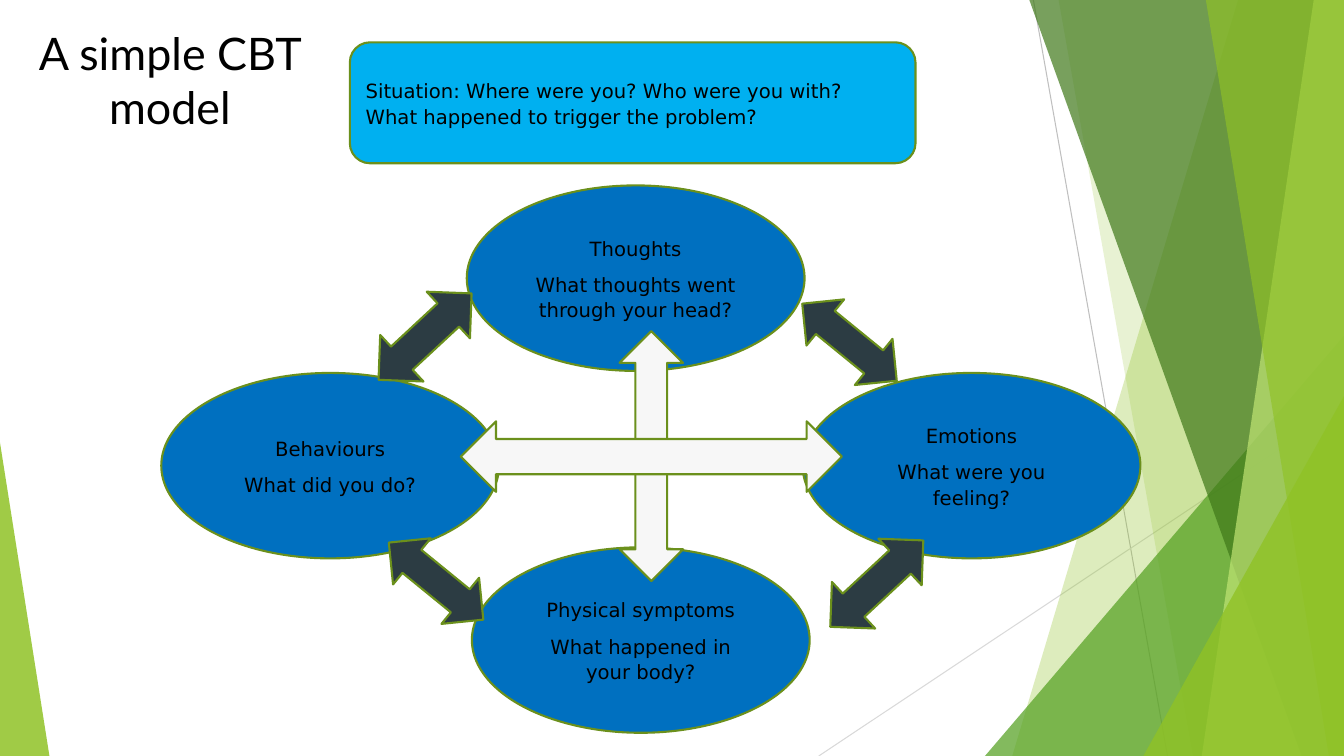
import pptx
import pptx.util
import pptx.dml.color
import pptx.enum.shapes
import pptx.enum.text
import pptx.oxml
import pptx.oxml.ns

RGBColor = pptx.dml.color.RGBColor
Shape = pptx.enum.shapes.MSO_SHAPE
Align = pptx.enum.text.PP_ALIGN
Anchor = pptx.enum.text.MSO_ANCHOR
qn = pptx.oxml.ns.qn

BLACK = RGBColor(0x00, 0x00, 0x00)
SKY = RGBColor(0x00, 0xB0, 0xF0)
BLUE = RGBColor(0x00, 0x70, 0xC0)
SLATE = RGBColor(0x2C, 0x3C, 0x43)
PALE = RGBColor(0xF7, 0xF7, 0xF7)
OLIVE = RGBColor(0x6B, 0x90, 0x1C)
LIME = RGBColor(0x90, 0xC2, 0x26)
LIGHT_LIME = RGBColor(0xC0, 0xE4, 0x74)
GREEN = RGBColor(0x54, 0xA0, 0x21)
FOREST = RGBColor(0x3F, 0x78, 0x19)
GRAY = RGBColor(0xBF, 0xBF, 0xBF)
LIGHT_GRAY = RGBColor(0xD9, 0xD9, 0xD9)


class ModelSlide:
    title_font = "Lato"
    body_font = "DejaVu Sans"

    def __init__(self, deck):
        self.column = deck.slide_width / 100
        self.row = deck.slide_height / 100
        self.slide = deck.slides.add_slide(deck.slide_layouts[5])
        self.shapes = self.slide.shapes

    def place(self, *shares):
        units = (self.column, self.row) * 2
        return [round(share * unit) for share, unit in zip(shares, units)]

    def add_wording(self, paragraph, wording, font, size):
        run = paragraph.add_run()
        run.text = wording
        run.font.name = font
        run.font.size = pptx.util.Pt(size)
        run.font.color.rgb = BLACK

    def title(self, wording, *box):
        heading = self.shapes.title
        heading.left, heading.top, heading.width, heading.height = self.place(*box)
        frame = heading.text_frame
        frame.word_wrap = True
        frame.auto_size = pptx.enum.text.MSO_AUTO_SIZE.NONE
        frame.vertical_anchor = Anchor.TOP
        frame.paragraphs[0].alignment = Align.CENTER
        self.add_wording(frame.paragraphs[0], wording, self.title_font, 32)

    def paint(self, shape, color, opacity=100):
        shape.shadow.inherit = False
        shape.fill.solid()
        shape.fill.fore_color.rgb = color
        if opacity < 100:
            shade = shape.element.spPr.find(qn("a:solidFill"))[0]
            alpha = pptx.oxml.parse_xml(
                f'<a:alpha {pptx.oxml.ns.nsdecls("a")} val="{opacity * 1000}"/>')
            shade.append(alpha)
        shape.line.fill.background()

    def ray(self, color, *ends):
        ray = self.shapes.add_connector(
            pptx.enum.shapes.MSO_CONNECTOR.STRAIGHT, *self.place(*ends))
        ray.line.color.rgb = color
        ray.line.width = pptx.util.Pt(0.75)
        ray.element.spPr.append(pptx.oxml.parse_xml(
            f'<a:effectLst {pptx.oxml.ns.nsdecls("a")}/>'))

    def band(self, top_left, bottom_left, color, opacity):
        builder = self.shapes.build_freeform(*self.place(top_left, 0))
        corners = [(100, 0), (100, 100), (bottom_left, 100)]
        builder.add_line_segments([self.place(*corner) for corner in corners])
        self.paint(builder.convert_to_shape(), color, opacity)

    def wedge(self, left, top, width, apex, color, opacity):
        wedge = self.shapes.add_shape(
            Shape.ISOSCELES_TRIANGLE, *self.place(left, top, width, 100 - top))
        wedge.adjustments[0] = apex
        self.paint(wedge, color, opacity)

    def outlined(self, kind, color, *box):
        shape = self.shapes.add_shape(kind, *self.place(*box))
        self.paint(shape, color)
        shape.line.color.rgb = OLIVE
        shape.line.width = pptx.util.Pt(1.5)
        return shape

    def panel(self, kind, color, wordings, align, *box):
        frame = self.outlined(kind, color, *box).text_frame
        frame.word_wrap = True
        frame.vertical_anchor = Anchor.MIDDLE
        for index, wording in enumerate(wordings):
            paragraph = frame.add_paragraph() if index else frame.paragraphs[0]
            paragraph.alignment = align
            paragraph.line_spacing = 1.07
            paragraph.space_after = pptx.util.Pt(8)
            self.add_wording(paragraph, wording, self.body_font, 14)

    def arrow(self, kind, color, angle, *box):
        self.outlined(kind, color, *box).rotation = angle


def main():
    deck = pptx.Presentation()
    deck.slide_width = pptx.util.Inches(13.33)
    deck.slide_height = pptx.util.Inches(7.5)
    model = ModelSlide(deck)

    model.ray(GRAY, 76.89, 0, 86.87, 100)
    model.ray(LIGHT_GRAY, 100, 53.73, 60.92, 100)
    model.band(92.12, 75.32, LIME, 30)
    model.band(78.77, 88.75, LIME, 20)
    model.wedge(73.29, 44.4, 26.71, 1, GREEN, 72)
    model.band(76.59, 96.85, FOREST, 70)
    model.band(97.75, 89.42, LIGHT_LIME, 70)
    model.band(89.72, 98.87, LIME, 65)
    model.wedge(85.07, 52.4, 14.93, 1, LIME, 80)
    model.wedge(0, 58.53, 3.68, 0, LIME, 85)

    model.title("A simple CBT model", 1.95, 2.8, 21.38, 15.73)
    situation = ("Situation: Where were you? Who were you with? "
                 "What happened to trigger the problem?")
    model.panel(Shape.ROUNDED_RECTANGLE, SKY, [situation], Align.LEFT,
                26.03, 5.6, 42.09, 16)

    aspects = [
        ("Thoughts", "What thoughts went through your head?", 34.73, 24.53),
        ("Emotions", "What were you feeling?", 59.72, 49.33),
        ("Physical symptoms", "What happened in your body?", 35.11, 72.4),
        ("Behaviours", "What did you do?", 12, 49.33),
    ]
    for aspect, question, left, top in aspects:
        model.panel(Shape.FLOWCHART_CONNECTOR, BLUE, [aspect, question],
                    Align.CENTER, left, top, 25.13, 24.53)

    rising, falling = (47.1, 4.73, 16.8), (129.2, 4.43, 16.13)
    neighbour_links = [
        (rising, 29.26, 36.13),
        (falling, 60.99, 37.2),
        (rising, 62.87, 68.8),
        (falling, 30.23, 68.8),
    ]
    for (angle, width, height), left, top in neighbour_links:
        model.arrow(Shape.UP_DOWN_ARROW, SLATE, angle, left, top, width, height)

    model.arrow(Shape.LEFT_RIGHT_ARROW, PALE, 90, 39.16, 56.13, 18.6, 8.4)
    model.arrow(Shape.LEFT_RIGHT_ARROW, PALE, 180, 34.28, 55.73, 28.36, 9.33)

    deck.save("out.pptx")


if __name__ == "__main__":
    main()
